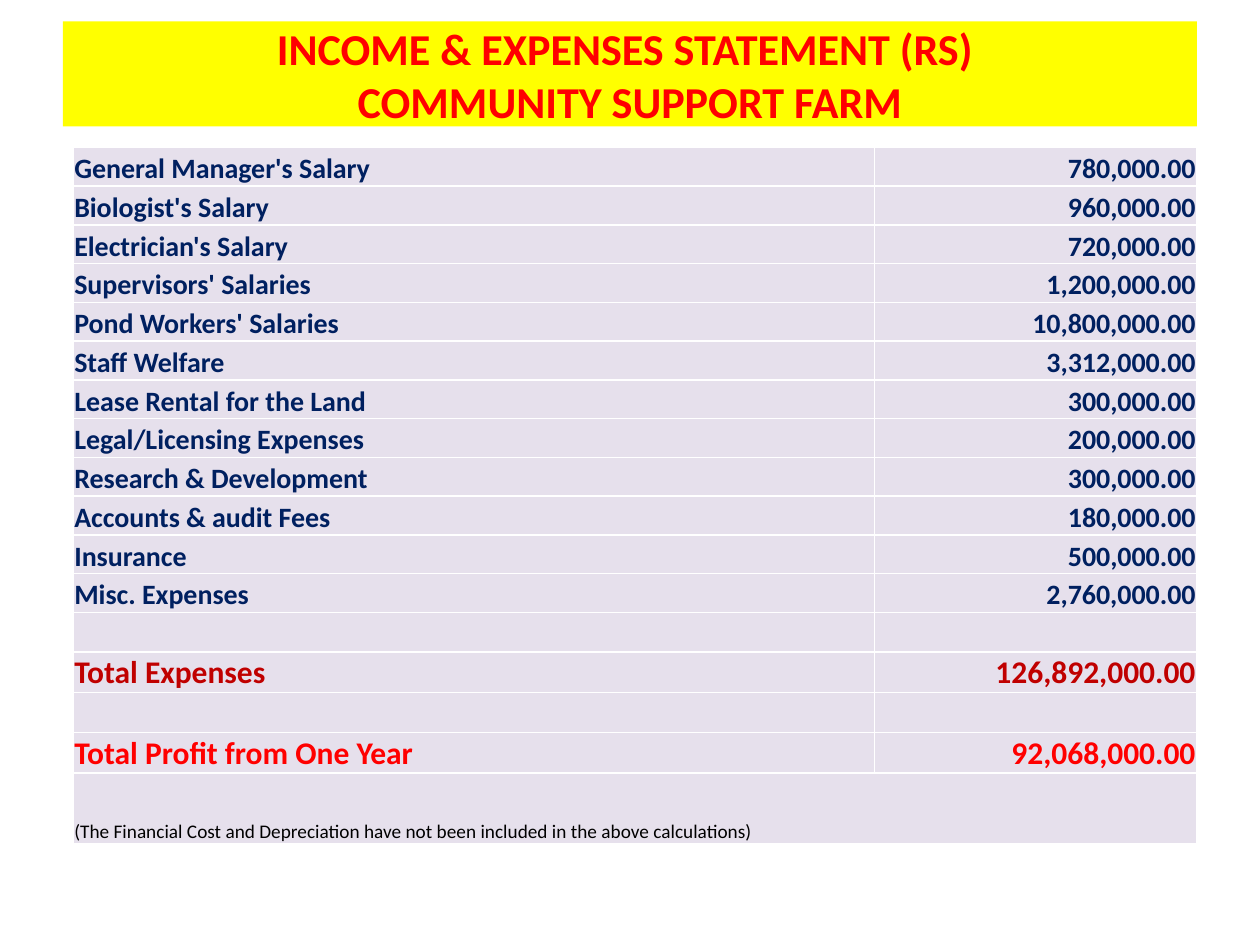
from dataclasses import dataclass

from lxml.etree import SubElement
from pptx import Presentation
from pptx.dml.color import RGBColor
from pptx.enum.shapes import MSO_SHAPE
from pptx.enum.text import MSO_ANCHOR, PP_ALIGN
from pptx.oxml.ns import qn
from pptx.util import Inches, Pt


@dataclass(frozen=True)
class Theme:
    font: str = "Calibri"
    banner: str = "FFFF00"
    cell: str = "E6E0EC"
    border: str = "FFFFFF"
    red: str = "FF0000"
    dark_red: str = "C00000"
    navy: str = "002060"
    black: str = "000000"
    title_size: float = 25.2
    total_size: float = 18
    item_size: float = 16
    note_size: float = 11


THEME = Theme()


@dataclass(frozen=True)
class Entry:
    label: str = ""
    amount: str = ""
    color: str = THEME.navy
    size: float = THEME.item_size
    bold: bool = True
    height: float = 4 / 13


TOTAL = {"size": THEME.total_size, "height": 0.32}
STATEMENT = [
    Entry("General Manager's Salary", "780,000.00"),
    Entry("Biologist's Salary", "960,000.00"),
    Entry("Electrician's Salary", "720,000.00"),
    Entry("Supervisors' Salaries", "1,200,000.00"),
    Entry("Pond Workers' Salaries", "10,800,000.00"),
    Entry("Staff Welfare", "3,312,000.00"),
    Entry("Lease Rental for the Land", "300,000.00"),
    Entry("Legal/Licensing Expenses", "200,000.00"),
    Entry("Research & Development", "300,000.00"),
    Entry("Accounts & audit Fees", "180,000.00"),
    Entry("Insurance", "500,000.00"),
    Entry("Misc. Expenses", "2,760,000.00"),
    Entry(),
    Entry("Total Expenses", "126,892,000.00", THEME.dark_red, **TOTAL),
    Entry(**TOTAL),
    Entry("Total Profit from One Year", "92,068,000.00", THEME.red, **TOTAL),
    Entry("(The Financial Cost and Depreciation have not been included in the above calculations)",
          color=THEME.black, size=THEME.note_size, bold=False, height=0.56),
]
COLUMN_WIDTHS = (6.36, 2.56)
CELL_FORMAT = {
    "vertical_anchor": MSO_ANCHOR.BOTTOM,
    "margin_left": Inches(0.01),
    "margin_right": Inches(0.01),
    "margin_top": Inches(0.01),
    "margin_bottom": 0,
}
TITLE_FORMAT = {
    "vertical_anchor": MSO_ANCHOR.MIDDLE,
    "word_wrap": True,
    "margin_top": 0,
    "margin_bottom": 0,
}


def apply(target, values: dict) -> None:
    for name, value in values.items():
        setattr(target, name, value)


def fill(target, color: str) -> None:
    target.fill.solid()
    target.fill.fore_color.rgb = RGBColor.from_string(color)


def add_text(paragraph, text: str, color: str, size: float, bold: bool = True) -> None:
    run = paragraph.add_run()
    run.text = text
    apply(run.font, {"name": THEME.font, "size": Pt(size), "bold": bold})
    run.font.color.rgb = RGBColor.from_string(color)


def add_borders(cell) -> None:
    properties = cell._tc.get_or_add_tcPr()
    for index, side in enumerate(("lnL", "lnR", "lnT", "lnB")):
        line = properties.makeelement(qn(f"a:{side}"), {"w": str(Pt(1))})
        solid = SubElement(line, qn("a:solidFill"))
        SubElement(solid, qn("a:srgbClr"), val=THEME.border)
        properties.insert(index, line)


def add_title(slide, width: int, height: int) -> None:
    banner = slide.shapes.add_shape(MSO_SHAPE.RECTANGLE, int(width * 0.05), Inches(0.17),
                                    int(width * 0.9), int(height / 9))
    banner.shadow.inherit = False
    fill(banner, THEME.banner)
    banner.line.fill.background()
    apply(banner.text_frame, TITLE_FORMAT)
    heading = banner.text_frame.paragraphs[0]
    heading.alignment = PP_ALIGN.CENTER
    add_text(heading, "INCOME & EXPENSES STATEMENT (RS) ", THEME.red, THEME.title_size)
    heading.add_line_break()
    add_text(heading, "COMMUNITY SUPPORT FARM", THEME.red, THEME.title_size)


def add_statement(slide, entries: list[Entry]) -> None:
    table = slide.shapes.add_table(
        len(entries), len(COLUMN_WIDTHS), Inches(0.58), Inches(1.17),
        Inches(sum(COLUMN_WIDTHS)), Inches(sum(entry.height for entry in entries))).table
    apply(table, {"first_row": False, "horz_banding": False})
    for column, width in zip(table.columns, COLUMN_WIDTHS):
        column.width = Inches(width)

    for row, entry in zip(table.rows, entries):
        row.height = Inches(entry.height)
        contents = ((entry.label, PP_ALIGN.LEFT), (entry.amount, PP_ALIGN.RIGHT))
        for cell, (text, alignment) in zip(row.cells, contents):
            apply(cell, CELL_FORMAT)
            fill(cell, THEME.cell)
            add_borders(cell)
            paragraph = cell.text_frame.paragraphs[0]
            paragraph.alignment = alignment
            if text:
                add_text(paragraph, text, entry.color, entry.size, entry.bold)

    # The closing note spans both columns
    last = len(entries) - 1
    table.cell(last, 0).merge(table.cell(last, 1))


def main() -> None:
    presentation = Presentation()
    apply(presentation, {"slide_width": Inches(10), "slide_height": Inches(7.5)})
    slide = presentation.slides.add_slide(presentation.slide_layouts[6])
    add_title(slide, presentation.slide_width, presentation.slide_height)
    add_statement(slide, STATEMENT)
    presentation.save("out.pptx")


if __name__ == "__main__":
    main()
